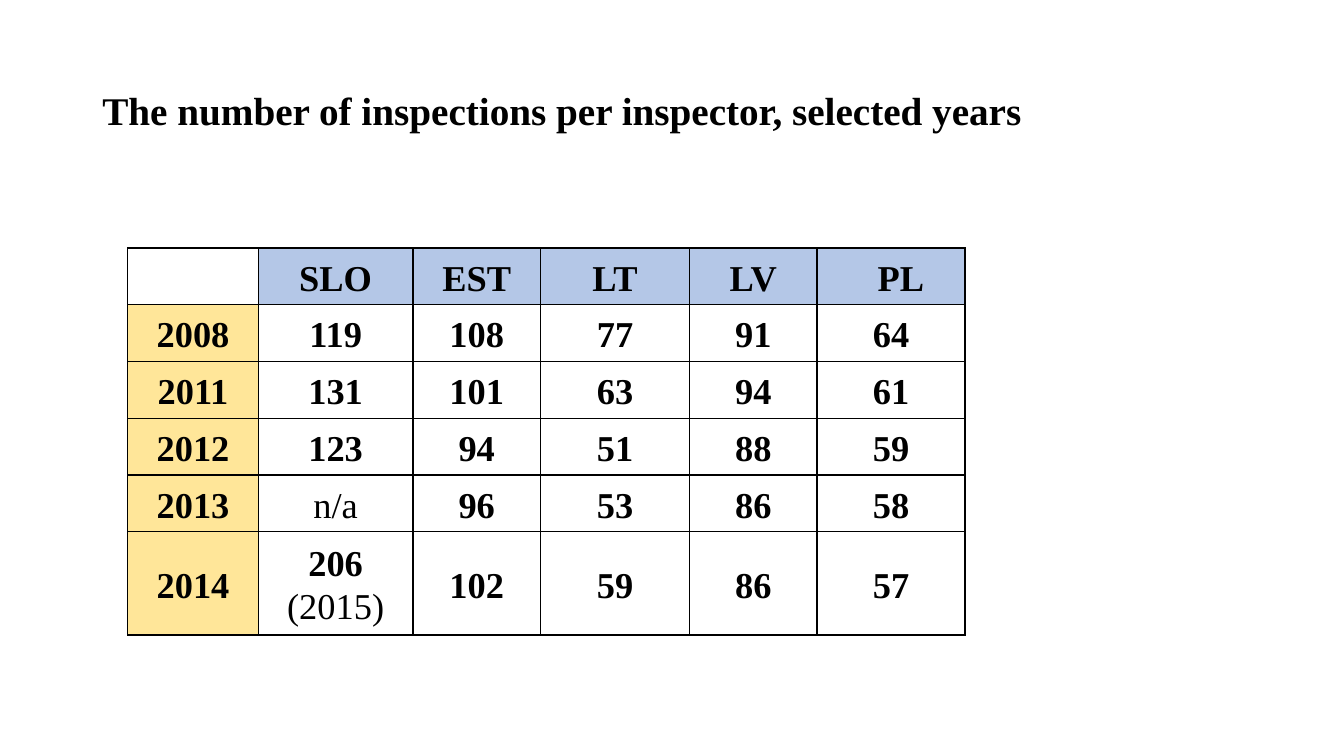
from lxml.etree import SubElement
from pptx import Presentation
from pptx.dml.color import RGBColor
from pptx.enum.text import MSO_ANCHOR, PP_ALIGN
from pptx.oxml.ns import qn
from pptx.util import Cm, Pt

COLOURS = {"text": "000000", "border": "000000", "body": "FFFFFF",
           "country": "B4C7E7", "year": "FFE699"}
FONT = "Times New Roman"
COLUMN_WIDTHS = [3.29, 3.9, 3.21, 3.76, 3.21, 3.73]
ROW_HEIGHTS = [1.43] * 5 + [2.6]
INSPECTIONS = [
    ["", "SLO", "EST", "LT", "LV", "PL"],
    ["2008", "119", "108", "77", "91", "64"],
    ["2011", "131", "101", "63", "94", "61"],
    ["2012", "123", "94", "51", "88", "59"],
    ["2013", "n/a", "96", "53", "86", "58"],
    ["2014", "206\n(2015)", "102", "59", "86", "57"],
]
PLAIN_TEXTS = {"n/a", "(2015)"}


def style_paragraph(paragraph, size, spacing, bold=True):
    """Set the font and line spacing of a paragraph."""
    paragraph.line_spacing = spacing
    font = paragraph.font
    font.name, font.size, font.bold = FONT, Pt(size), bold
    font.color.rgb = RGBColor.from_string(COLOURS["text"])


def add_title(slide, text):
    """Add the slide heading, centred vertically in its box."""
    title = slide.shapes.add_textbox(Cm(2.33), Cm(1.01), Cm(29.21), Cm(3.68))
    frame = title.text_frame
    frame.word_wrap = True
    frame.vertical_anchor = MSO_ANCHOR.MIDDLE
    frame.text = text
    style_paragraph(frame.paragraphs[0], 28, 0.9)


def add_borders(cell):
    """Draw a thin line on all four sides of a cell."""
    properties = cell._tc.get_or_add_tcPr()
    for side in ("a:lnL", "a:lnR", "a:lnT", "a:lnB"):
        line = SubElement(properties, qn(side), w=str(Pt(1)))
        fill = SubElement(line, qn("a:solidFill"))
        SubElement(fill, qn("a:srgbClr"), val=COLOURS["border"])


def fill_cell(cell, text, colour):
    """Write and style the contents of one table cell."""
    add_borders(cell)
    cell.fill.solid()
    cell.fill.fore_color.rgb = RGBColor.from_string(colour)
    cell.vertical_anchor = MSO_ANCHOR.MIDDLE
    cell.margin_left = cell.margin_right = Cm(0.41)
    cell.margin_top, cell.margin_bottom = Cm(0.05), Cm(0)
    cell.text = text
    for paragraph in cell.text_frame.paragraphs:
        paragraph.alignment = PP_ALIGN.CENTER
        style_paragraph(paragraph, 26, 1.07, paragraph.text not in PLAIN_TEXTS)


def cell_colour(row, column):
    """Return the fill colour for a table position."""
    if row == 0 and column > 0:
        return COLOURS["country"]
    if row > 0 and column == 0:
        return COLOURS["year"]
    return COLOURS["body"]


def add_inspection_table(slide):
    """Add the table of inspections by year and country."""
    frame = slide.shapes.add_table(
        len(ROW_HEIGHTS), len(COLUMN_WIDTHS), Cm(3.22), Cm(6.25),
        Cm(sum(COLUMN_WIDTHS)), Cm(sum(ROW_HEIGHTS)))
    table = frame.table
    for column, width in zip(table.columns, COLUMN_WIDTHS):
        column.width = Cm(width)
    for row, height in zip(table.rows, ROW_HEIGHTS):
        row.height = Cm(height)
    for row, texts in enumerate(INSPECTIONS):
        for column, text in enumerate(texts):
            fill_cell(table.cell(row, column), text, cell_colour(row, column))
    last_heading = table.cell(0, len(COLUMN_WIDTHS) - 1).text_frame.paragraphs[0]
    last_heading._p.get_or_add_pPr().set("indent", str(Cm(0.5)))


def main():
    """Build and save the presentation."""
    presentation = Presentation()
    presentation.slide_width, presentation.slide_height = Cm(33.87), Cm(19.05)
    slide = presentation.slides.add_slide(presentation.slide_layouts[6])
    add_title(slide, "The number of inspections per inspector, selected years")
    add_inspection_table(slide)
    presentation.save("out.pptx")


if __name__ == "__main__":
    main()
